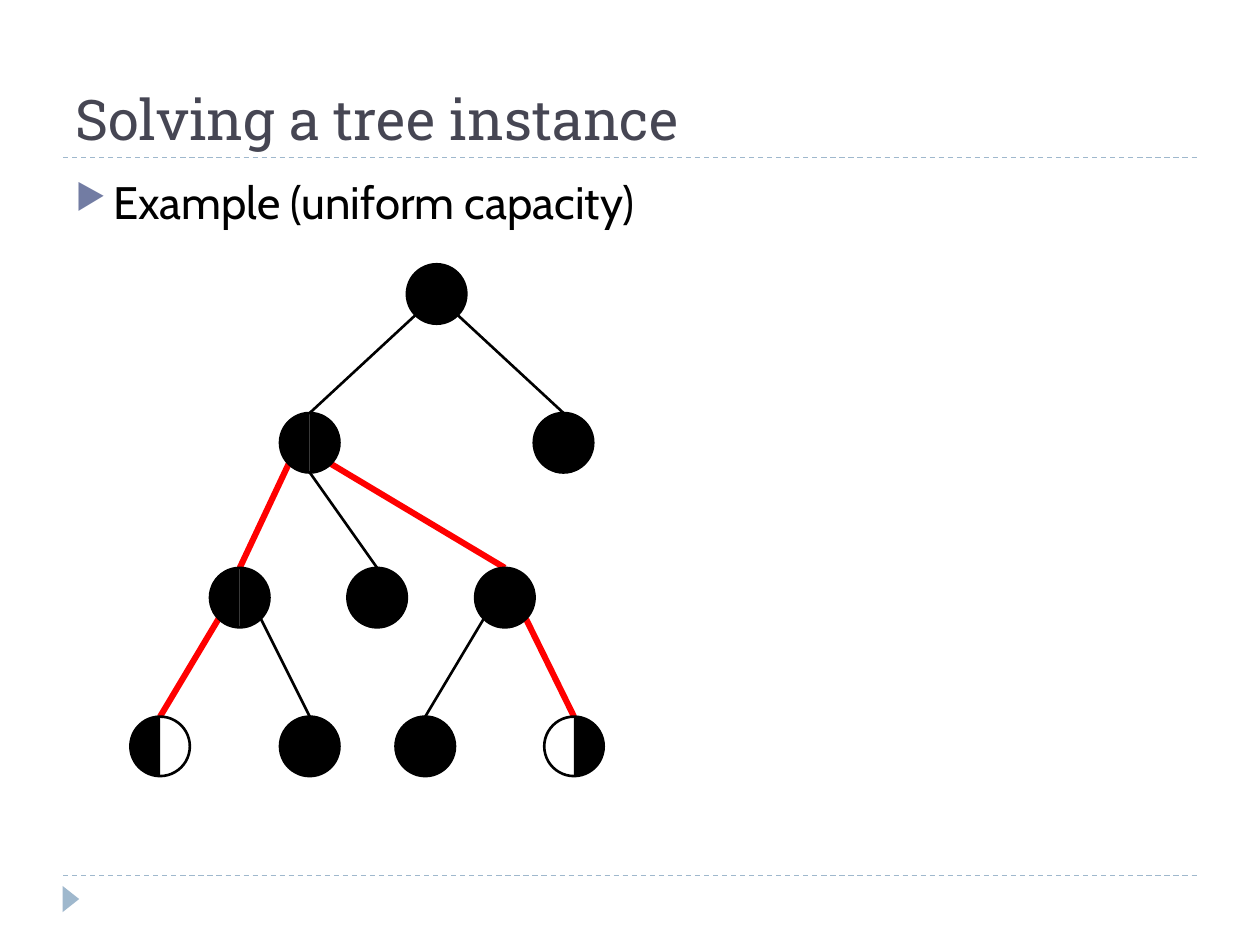
from lxml import etree
from pptx import Presentation
from pptx.dml.color import RGBColor
from pptx.enum.dml import MSO_LINE
from pptx.enum.shapes import MSO_CONNECTOR, MSO_SHAPE
from pptx.enum.text import MSO_ANCHOR
from pptx.oxml.ns import qn
from pptx.util import Pt

OVAL, ARC, TRIANGLE = MSO_SHAPE.OVAL, MSO_SHAPE.ARC, MSO_SHAPE.ISOSCELES_TRIANGLE
STRAIGHT, DASH = MSO_CONNECTOR.STRAIGHT, MSO_LINE.DASH
TOP, BOTTOM = MSO_ANCHOR.TOP, MSO_ANCHOR.BOTTOM

TITLE = "Solving a tree instance"
BULLET = "Example (uniform capacity)"

THEME = {
    "title": {"name": "Roboto Slab", "size": Pt(32), "color": "464653"},
    "body": {"name": "Cabin", "size": Pt(26), "color": "000000"},
    "bullet": "727CA3", "rule": "9FB8CD", "node": "000000", "path": "FF0000",
    "rule_width": 0.75, "edge_width": 1.5, "path_width": 3.5,
}

DIAMETER = 34
LEVEL_TOPS = [151, 236, 324.5, 409.5]
# name: (level, left, fill), where fill is "full" or the halves that are filled
NODES = {
    "root": (0, 232.5, "full"),
    "hub": (1, 160, "LR"),
    "right": (1, 305, "full"),
    "left inner": (2, 120, "LR"),
    "middle": (2, 198.5, "full"),
    "right inner": (2, 271.5, "LR"),
    "leaf 1": (3, 74.5, "L"),
    "leaf 2": (3, 160, "full"),
    "leaf 3": (3, 226, "full"),
    "leaf 4": (3, 311, "R"),
}
# parent, child, side where the edge leaves the parent (-1 left, 0 bottom, 1 right), on the path
EDGES = [
    ("root", "hub", -1, False),
    ("root", "right", 1, False),
    ("hub", "left inner", -1, True),
    ("hub", "middle", 0, False),
    ("hub", "right inner", 1, True),
    ("left inner", "leaf 1", -1, True),
    ("left inner", "leaf 2", 1, False),
    ("right inner", "leaf 3", -1, False),
    ("right inner", "leaf 4", 1, True),
]
# start and end of each half circle, in 100000ths of the 60000-per-degree unit
HALVES = {"L": (54, 162), "R": (162, 54)}


def rgb(color):
    return RGBColor.from_string(color)


def add_line(s, start, end, color, width):
    line = s.shapes.add_connector(STRAIGHT, *map(Pt, start + end))
    line.line.color.rgb = rgb(color)
    line.line.width = Pt(width)
    etree.SubElement(line._element.spPr, qn("a:effectLst"))
    return line


def add_shape(s, kind, box, fill=None, outline=None):
    sp = s.shapes.add_shape(kind, *map(Pt, box))
    sp.shadow.inherit = False
    for part, color in ((sp.fill, fill), (sp.line.fill, outline)):
        if color:
            part.solid()
            part.fore_color.rgb = rgb(color)
        else:
            part.background()
    return sp


def add_text(s, box, text, style, anchor):
    tf = s.shapes.add_textbox(*map(Pt, box)).text_frame
    tf.word_wrap = True
    tf.vertical_anchor = anchor
    p = tf.paragraphs[0]
    r = p.add_run()
    r.text = text
    for key in ("name", "size"):
        setattr(r.font, key, style[key])
    r.font.color.rgb = rgb(style["color"])
    return p


def add_bullet(p, char, color, percent, indent):
    pPr = p._p.get_or_add_pPr()
    pPr.set("marL", str(Pt(indent)))
    pPr.set("indent", str(-Pt(indent)))
    clr = etree.SubElement(pPr, qn("a:buClr"))
    etree.SubElement(clr, qn("a:srgbClr"), val=color)
    etree.SubElement(pPr, qn("a:buSzPct"), val=str(percent * 1000))
    etree.SubElement(pPr, qn("a:buChar"), char=char)


def add_node(s, level, left, fill):
    box = (left, LEVEL_TOPS[level], DIAMETER, DIAMETER)
    color = THEME["node"]
    node = add_shape(s, OVAL, box, color if fill == "full" else None, color)
    node.line.width = Pt(THEME["edge_width"])
    for half in fill if fill != "full" else "":
        arc = add_shape(s, ARC, box, color)
        arc.adjustments[0], arc.adjustments[1] = HALVES[half]
    return node


def add_edge(s, nodes, parent, child, side, on_path):
    """Draw an edge behind the nodes, ending at the top of the child."""
    level, left, _ = NODES[parent]
    radius = DIAMETER / 2
    reach = radius * 0.5 ** 0.5  # 45 degrees along the circle
    start = (left + radius + side * reach,
             LEVEL_TOPS[level] + radius + (reach if side else radius))
    kind = "path" if on_path else "edge"
    color = THEME["path" if on_path else "node"]
    line = add_line(s, start, start, color, THEME[kind + "_width"])
    line.end_connect(nodes[child], 0)
    s.shapes._spTree.insert(2, line._element)


def main():
    prs = Presentation()
    prs.slide_width, prs.slide_height = Pt(720), Pt(540)
    s = prs.slides.add_slide(prs.slide_layouts[6])

    for y in (90, 500.5):
        rule = add_line(s, (36, y), (684, y), THEME["rule"], THEME["rule_width"])
        rule.line.dash_style = DASH
    marker = add_shape(s, TRIANGLE, (33, 509, 15, 9.5), THEME["rule"])
    marker.rotation = 90

    add_text(s, (36, 12, 648, 78), TITLE, THEME["title"], BOTTOM)
    p = add_text(s, (36, 96, 648, 389), BULLET, THEME["body"], TOP)
    p.space_before = Pt(6)
    add_bullet(p, "▶", THEME["bullet"], 76, 21.6)

    nodes = {name: add_node(s, *node) for name, node in NODES.items()}
    for edge in EDGES:
        add_edge(s, nodes, *edge)

    prs.save("out.pptx")


if __name__ == "__main__":
    main()
